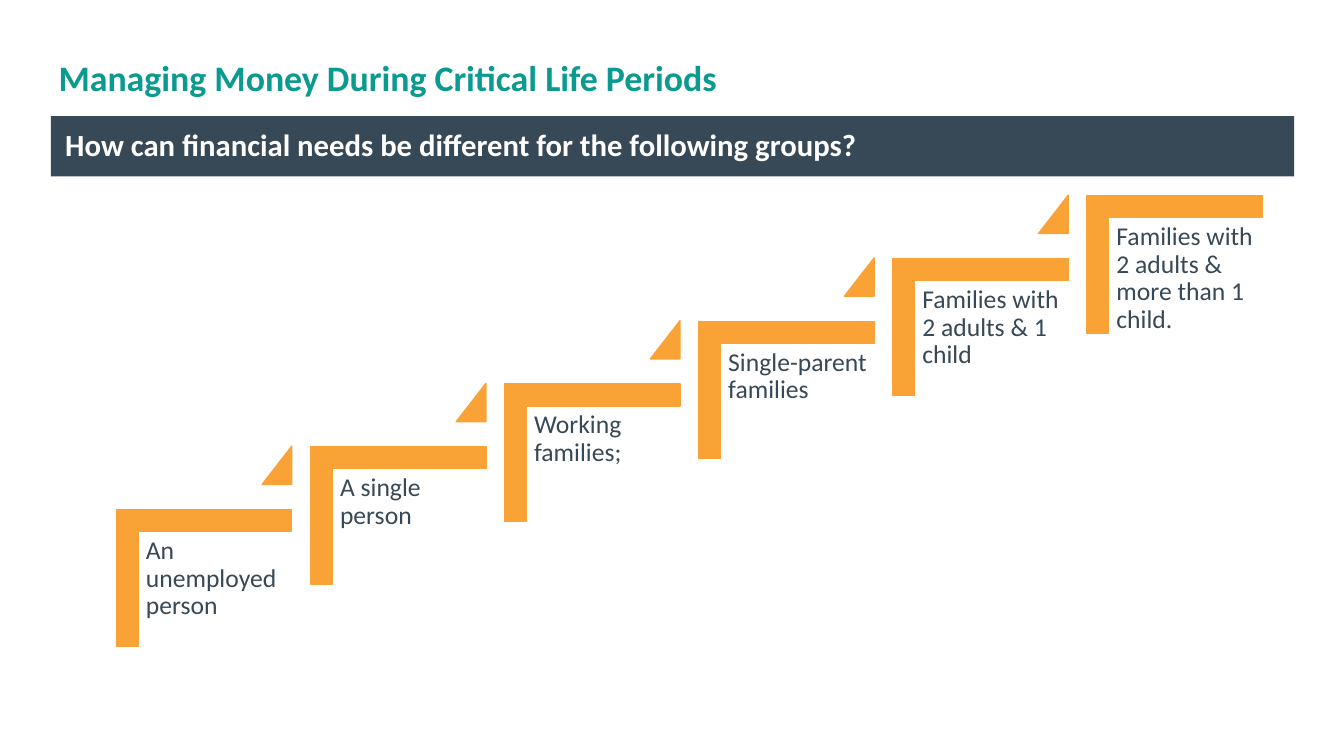
import pptx
import pptx.util
import pptx.dml.color
import pptx.enum.shapes
import pptx.enum.text

SHAPE = pptx.enum.shapes.MSO_SHAPE
ANCHOR = pptx.enum.text.MSO_ANCHOR
ALIGN = pptx.enum.text.PP_ALIGN

# Content
TITLE = "Managing Money During Critical Life Periods"
QUESTION = "How can financial needs be different for the following groups?"
GROUPS = [
    "An unemployed person",
    "A single person",
    "Working families;",
    "Single-parent families",
    "Families with 2 adults & 1 child",
    "Families with 2 adults & more than 1 child.",
]
TEAL, SLATE, ORANGE, WHITE = "0A9A8F", "374856", "F9A337", "FFFFFF"
FONT = "Calibri"

# Staircase: first and last step, as left and top of the corner shape
FIRST, LAST = (141, 511), (1152, 184)


def px(n):
    """96 px to the inch."""
    return pptx.util.Emu(round(n * 9525))


def rgb(color):
    return pptx.dml.color.RGBColor.from_string(color)


def add_shape(kind, left, top, width, height, color, outlined=True):
    s = slide.shapes.add_shape(kind, px(left), px(top), px(width), px(height))
    s.shadow.inherit = False
    s.fill.solid()
    s.fill.fore_color.rgb = rgb(color)
    if outlined:
        s.line.color.rgb = rgb(color)
        s.line.width = pptx.util.Pt(1)
    else:
        s.line.fill.background()
    return s


def add_box(left, top, width, height):
    return slide.shapes.add_textbox(px(left), px(top), px(width), px(height))


def write(s, text, size, color, bold=False, inset=(8, 5),
          anchor=ANCHOR.TOP, align=ALIGN.LEFT):
    tf = s.text_frame
    tf.word_wrap = True
    tf.vertical_anchor = anchor
    tf.margin_left = tf.margin_right = px(inset[0])
    tf.margin_top = tf.margin_bottom = px(inset[1])
    p = tf.paragraphs[0]
    p.alignment = align
    p.line_spacing = 0.9
    r = p.add_run()
    r.text = text
    r.font.name = FONT
    r.font.size = pptx.util.Pt(size)
    r.font.bold = bold
    r.font.color.rgb = rgb(color)


prs = pptx.Presentation()
prs.slide_width = px(1400)
prs.slide_height = px(788)
slide = prs.slides.add_slide(prs.slide_layouts[6])

# Title and question bar
write(add_box(53, 45, 1294, 76), TITLE, 28, TEAL, bold=True,
      anchor=ANCHOR.MIDDLE)
bar = add_shape(SHAPE.RECTANGLE, 53, 121, 1295, 63, SLATE, outlined=False)
write(bar, QUESTION, 24, WHITE, bold=True, inset=(15, 5),
      anchor=ANCHOR.MIDDLE, align=ALIGN.JUSTIFY)

# Steps, rising from left to right
last_step = len(GROUPS) - 1
for i, group in enumerate(GROUPS):
    left, top = (a + (b - a) * i / last_step for a, b in zip(FIRST, LAST))
    corner = add_shape(SHAPE.CORNER, left, top, 143, 183, ORANGE)
    corner.rotation = 90
    corner.adjustments[0] = corner.adjustments[1] = 0.16
    write(add_box(left + 5, top + 43, 165, 189), group, 20, SLATE,
          inset=(6, 6))
    if i < last_step:
        marker = add_shape(SHAPE.ISOSCELES_TRIANGLE, left + 132, top - 46,
                           31, 40, ORANGE)
        marker.adjustments[0] = 1

prs.save("out.pptx")
